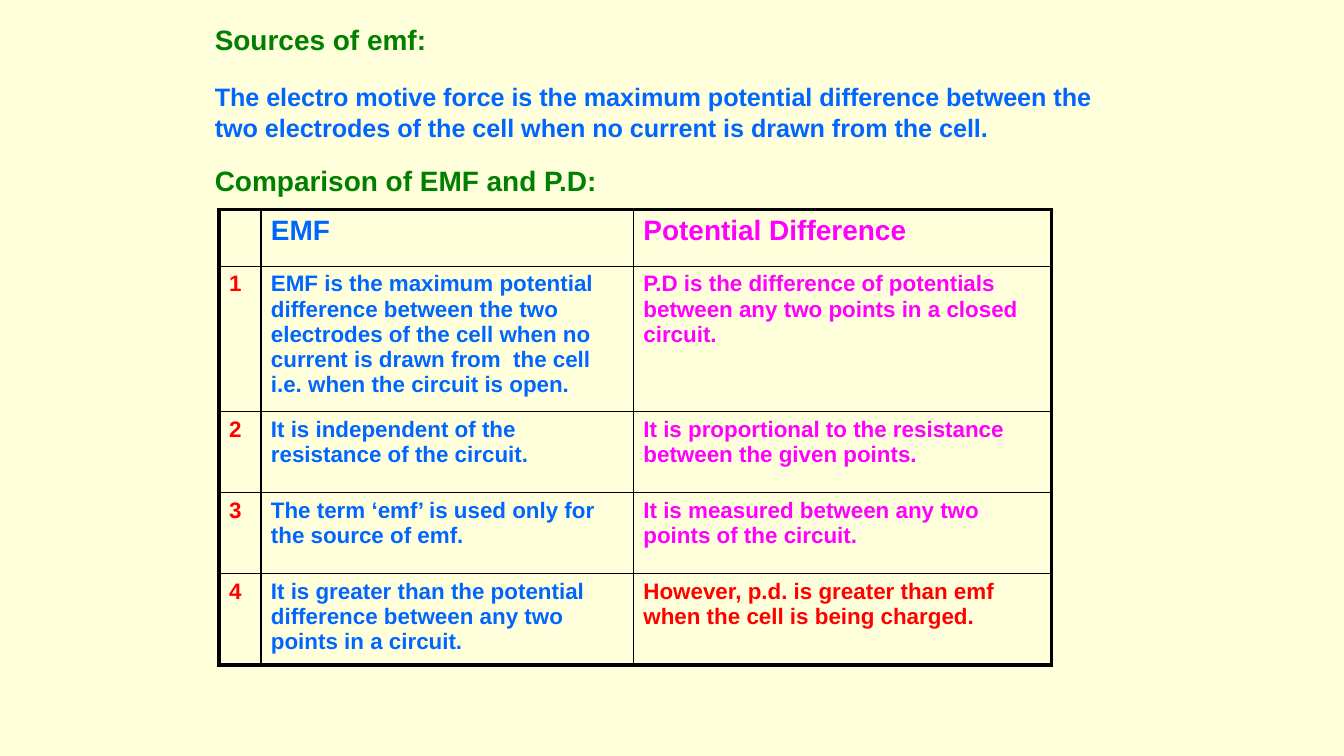
from lxml import etree
from pptx import Presentation
from pptx.dml.color import RGBColor
from pptx.enum.text import MSO_AUTO_SIZE
from pptx.oxml.ns import qn
from pptx.util import Cm, Pt

FIT_SHAPE = MSO_AUTO_SIZE.SHAPE_TO_FIT_TEXT
COLORS = {
    "page": "FFFFDB",
    "heading": "008000",
    "emf": "0066FF",
    "difference": "FF00FF",
    "accent": "FF0000",
    "border": "000000",
}
COLUMN_WIDTHS = [0.79, 7.04, 7.9]
ROW_HEIGHTS = [1.07, 2.73, 1.53, 1.53, 1.73]
COLUMN_COLORS = ["accent", "emf", "difference"]
COMPARISON = [
    ("", "EMF", "Potential Difference"),
    ("1",
     "EMF is the maximum potential difference between the two electrodes of the cell "
     "when no current is drawn from  the cell i.e. when the circuit is open.",
     "P.D is the difference of potentials between any two points in a closed circuit."),
    ("2",
     "It is independent of the resistance of the circuit.",
     "It is proportional to the resistance between the given points."),
    ("3",
     "The term ‘emf’ is used only for the source of emf.",
     "It is measured between any two points of the circuit."),
    ("4",
     "It is greater than the potential difference between any two points in a circuit.",
     "However, p.d. is greater than emf when the cell is being charged."),
]


class PageBuilder:
    font_name = "Arial"
    heading_size = 15
    cell_size = 12
    outer_width = 2.25
    inner_width = 1

    def __init__(self, page):
        self.page = page

    def background(self, color):
        fill = self.page.background.fill
        fill.solid()
        fill.fore_color.rgb = RGBColor.from_string(COLORS[color])

    def style(self, para, size, color):
        para.font.name = self.font_name
        para.font.size = Pt(size)
        para.font.bold = True
        para.font.color.rgb = RGBColor.from_string(COLORS[color])

    def text(self, words, left, top, width, height, size, color, wrap):
        box = self.page.shapes.add_textbox(Cm(left), Cm(top), Cm(width), Cm(height))
        frame = box.text_frame
        frame.word_wrap = wrap
        frame.auto_size = FIT_SHAPE
        para = frame.paragraphs[0]
        para.text = words
        self.style(para, size, color)

    def heading(self, words, top, width):
        self.text(words, 3.81, top, width, 0.89, self.heading_size, "heading", False)

    def borders(self, cell, outer_sides):
        properties = cell._tc.get_or_add_tcPr()
        for side in ("L", "R", "T", "B"):
            width = self.outer_width if side in outer_sides else self.inner_width
            line = etree.SubElement(properties, qn(f"a:ln{side}"), w=str(Pt(width)))
            fill = etree.SubElement(line, qn("a:solidFill"))
            etree.SubElement(fill, qn("a:srgbClr"), val=COLORS["border"])

    def cell(self, cell, words, size, color, outer_sides):
        cell.margin_left = cell.margin_right = Cm(0.19)
        cell.margin_top = cell.margin_bottom = Cm(0.1)
        para = cell.text_frame.paragraphs[0]
        para.text = words
        self.style(para, size, color)
        self.borders(cell, outer_sides)
        cell.fill.background()

    def table(self, rows, left, top):
        frame = self.page.shapes.add_table(
            len(rows), len(COLUMN_WIDTHS), Cm(left), Cm(top),
            Cm(sum(COLUMN_WIDTHS)), Cm(sum(ROW_HEIGHTS)))
        table = frame.table
        table.first_row = False
        table.horz_banding = False
        for column, width in zip(table.columns, COLUMN_WIDTHS):
            column.width = Cm(width)
        for row, height in zip(table.rows, ROW_HEIGHTS):
            row.height = Cm(height)
        last_row, last_column = len(rows) - 1, len(COLUMN_WIDTHS) - 1
        for r, row in enumerate(rows):
            for c, words in enumerate(row):
                edges = {"T": r == 0, "B": r == last_row, "L": c == 0, "R": c == last_column}
                outer_sides = [side for side, is_outer in edges.items() if is_outer]
                size = self.heading_size if r == 0 else self.cell_size
                is_exception = r == last_row and c == last_column
                color = "accent" if is_exception else COLUMN_COLORS[c]
                self.cell(table.cell(r, c), words, size, color, outer_sides)


def main():
    deck = Presentation()
    deck.slide_width = Cm(25.4)
    deck.slide_height = Cm(14.28)
    builder = PageBuilder(deck.slides.add_slide(deck.slide_layouts[6]))
    builder.background("page")
    builder.heading("Sources of emf:", 0.3, 4.55)
    builder.text(
        "The electro motive force is the maximum potential difference between the "
        "two electrodes of the cell when no current is drawn from the cell.",
        3.81, 1.42, 17.3, 1.42, 13.5, "emf", True)
    builder.heading("Comparison of EMF and P.D:", 2.97, 7.8)
    builder.table(COMPARISON, 4.14, 3.96)
    deck.save("out.pptx")


if __name__ == "__main__":
    main()
